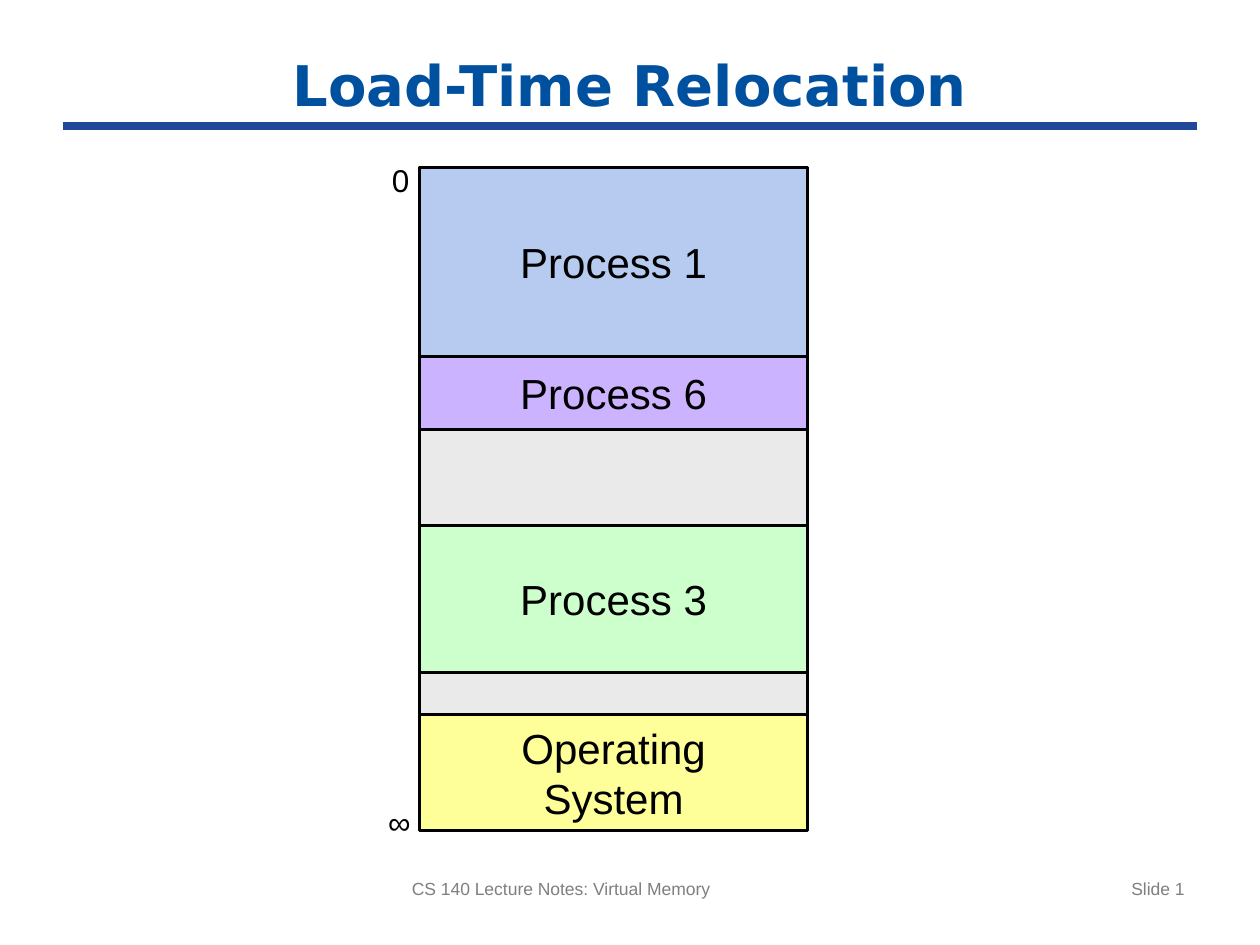
from pptx import Presentation
from pptx.dml.color import RGBColor as RGB
from pptx.enum.shapes import MSO_CONNECTOR as Conn, MSO_SHAPE as Shape
from pptx.enum.text import MSO_ANCHOR as Anchor, MSO_AUTO_SIZE as Auto, PP_ALIGN as Align
from pptx.oxml.ns import qn
from pptx.util import Inches, Pt
from lxml.etree import SubElement as Sub

HUES = {
    "rule": "1F4899", "title": "0050A0", "note": "7F7F7F", "ink": "000000",
    "free": "EAEAEA", "blue": "B7CBF0", "violet": "CCB3FF",
    "green": "CCFFCC", "yellow": "FFFF99",
}
LEFT, TOP, WIDTH, HEIGHT = 3.33, 1.33, 3.08, 5.25
BLOCKS = [
    ("Process 1", 1.33, 1.5, "blue"),
    ("Process 6", 2.83, 0.58, "violet"),
    ("Process 3", 4.17, 1.17, "green"),
    ("Operating\nSystem", 5.67, 0.92, "yellow"),
]


def hue(name):
    return RGB.from_string(HUES[name])


def write(frame, text, size=24, color="ink", font="Arial", bold=False,
          align=Align.CENTER, anchor=Anchor.MIDDLE, wrap=False, inset=None,
          fit=Auto.NONE):
    frame.auto_size = fit
    frame.word_wrap = wrap
    frame.vertical_anchor = anchor
    if inset is not None:
        frame.margin_left = frame.margin_right = Inches(inset)
        frame.margin_top = frame.margin_bottom = Inches(inset)
    para = frame.paragraphs[0]
    para.text = text
    para.alignment = align
    for run in para.runs:
        run.font.size = Pt(size)
        run.font.name = font
        run.font.bold = bold
        run.font.color.rgb = hue(color)


class Page:
    def __init__(self, slide):
        self.slide = slide
        self.shapes = slide.shapes

    def title(self, text, *box):
        head = self.shapes.title
        head.left, head.top, head.width, head.height = map(Inches, box)
        write(head.text_frame, text, size=32, color="title",
              font="DejaVu Sans", bold=True, wrap=True)

    def rule(self, *ends):
        line = self.shapes.add_connector(Conn.STRAIGHT, *map(Inches, ends))
        line.line.color.rgb = hue("rule")
        line.line.width = Pt(4.5)
        Sub(line._element.spPr, qn("a:effectLst"))

    def block(self, text, top, height, fill):
        rect = self.shapes.add_shape(
            Shape.RECTANGLE, *map(Inches, (LEFT, top, WIDTH, height)))
        rect.shadow.inherit = False
        rect.fill.solid()
        rect.fill.fore_color.rgb = hue(fill)
        rect.line.color.rgb = hue("ink")
        rect.line.width = Pt(1.5)
        if text:
            write(rect.text_frame, text)

    def label(self, text, *box, **style):
        area = self.shapes.add_textbox(*map(Inches, box))
        write(area.text_frame, text, anchor=Anchor.TOP, **style)


def main():
    deck = Presentation()
    deck.slide_width, deck.slide_height = Inches(10), Inches(7.5)
    page = Page(deck.slides.add_slide(deck.slide_layouts[5]))
    page.rule(0.5, 1, 9.5, 1)
    page.title("Load-Time Relocation", 0.5, 0.33, 9, 0.67)

    page.block("", TOP, HEIGHT, "free")
    for item in BLOCKS:
        page.block(*item)

    mark = dict(size=18, inset=0, fit=Auto.SHAPE_TO_FIT_TEXT)
    page.label("0", 3.11, 1.28, 0.14, 0.3, **mark)
    page.label("∞", 3.08, 6.37, 0.18, 0.3, **mark)

    note = dict(size=10, color="note", wrap=True)
    page.label("CS 140 Lecture Notes: Virtual Memory", 3.17, 6.92, 3.75, 0.43,
               align=Align.LEFT, **note)
    page.label("Slide 1", 7.17, 6.92, 2.33, 0.43, align=Align.RIGHT, **note)
    deck.save("out.pptx")


if __name__ == "__main__":
    main()
